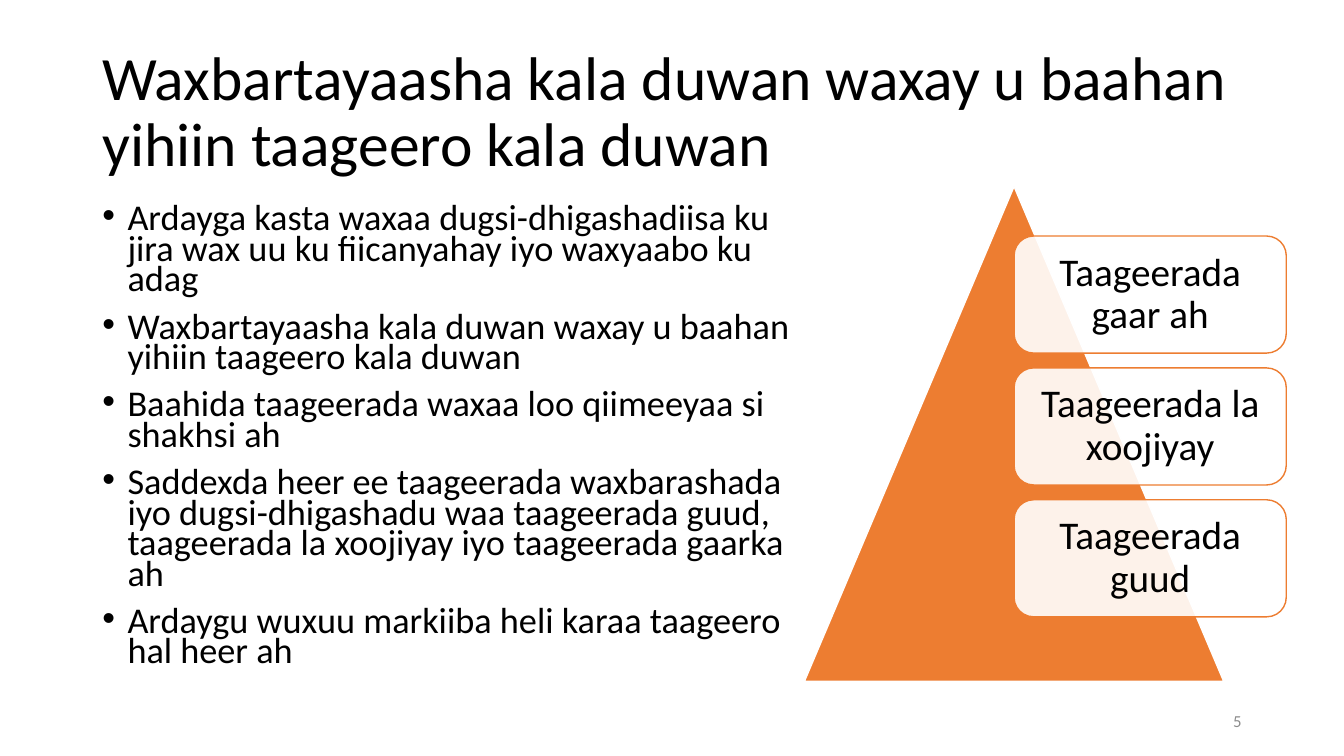
from lxml import etree
from pptx import Presentation
from pptx.dml.color import RGBColor
from pptx.enum import shapes, text
from pptx.oxml import ns
from pptx.util import Pt

BLACK = RGBColor(0, 0, 0)
WHITE = RGBColor(255, 255, 255)
ORANGE = RGBColor(0xED, 0x7D, 0x31)
GRAY = RGBColor(0x8C, 0x8C, 0x8C)

TITLE = "Waxbartayaasha kala duwan waxay u baahan yihiin taageero kala duwan"
POINTS = [
    "Ardayga kasta waxaa dugsi-dhigashadiisa ku jira wax uu ku fiicanyahay iyo waxyaabo ku adag",
    "Waxbartayaasha kala duwan waxay u baahan yihiin taageero kala duwan",
    "Baahida taageerada waxaa loo qiimeeyaa si shakhsi ah",
    "Saddexda heer ee taageerada waxbarashada iyo dugsi-dhigashadu waa taageerada guud, "
    "taageerada la xoojiyay iyo taageerada gaarka ah",
    "Ardaygu wuxuu markiiba heli karaa taageero hal heer ah",
]
LEVELS = ["Taageerada gaar ah", "Taageerada la xoojiyay", "Taageerada guud"]


def write(frame, words, size, color=BLACK, align=text.PP_ALIGN.LEFT, gap=0.9,
          anchor=text.MSO_ANCHOR.MIDDLE):
    frame.word_wrap = True
    frame.vertical_anchor = anchor
    frame.text = words
    for para in frame.paragraphs:
        para.alignment = align
        para.line_spacing = gap
        for run in para.runs:
            run.font.name = "Calibri"
            run.font.size = Pt(size)
            run.font.color.rgb = color


def label(slide, box, words, size, **style):
    frame = slide.shapes.add_textbox(*map(Pt, box)).text_frame
    write(frame, words, size, **style)
    return frame


def bullet(para):
    para.space_before = Pt(12)
    props = para._p.get_or_add_pPr()
    props.set("marL", str(Pt(18)))
    props.set("indent", str(-Pt(18)))
    etree.SubElement(props, ns.qn("a:buFont")).set("typeface", "Arial")
    etree.SubElement(props, ns.qn("a:buChar")).set("char", "•")


def shape(slide, kind, box, fill, line):
    item = slide.shapes.add_shape(kind, *map(Pt, box))
    item.shadow.inherit = False
    item.fill.solid()
    item.fill.fore_color.rgb = fill
    item.line.color.rgb = line
    item.line.width = Pt(1)
    return item


def level(slide, top, words):
    card = shape(slide, shapes.MSO_SHAPE.ROUNDED_RECTANGLE,
                 (724.4, top, 194.4, 83.6), WHITE, ORANGE)
    tint = card._element.spPr.find(ns.qn("a:solidFill"))[0]
    etree.SubElement(tint, ns.qn("a:alpha")).set("val", "90000")
    frame = card.text_frame
    frame.margin_left = frame.margin_right = Pt(12.5)
    frame.margin_top = frame.margin_bottom = Pt(12.5)
    write(frame, words, 28, align=text.PP_ALIGN.CENTER)


def main():
    deck = Presentation()
    deck.slide_width, deck.slide_height = Pt(960), Pt(540)
    slide = deck.slides.add_slide(deck.slide_layouts[6])

    label(slide, (66, 28.8, 828, 104.4), TITLE, 44)
    body = label(slide, (66, 144, 519, 342.7), "\n".join(POINTS), 25.9,
                 gap=0.7, anchor=text.MSO_ANCHOR.TOP)
    for para in body.paragraphs:
        bullet(para)

    shape(slide, shapes.MSO_SHAPE.ISOSCELES_TRIANGLE,
          (574.6, 133.2, 299.5, 353.5), ORANGE, WHITE)
    for i, words in enumerate(LEVELS):
        level(slide, 168.6 + i * 94.2, words)

    label(slide, (678, 500.4, 216, 28.8), "5", 12, color=GRAY,
          align=text.PP_ALIGN.RIGHT, gap=1.0)
    deck.save("out.pptx")


if __name__ == "__main__":
    main()
